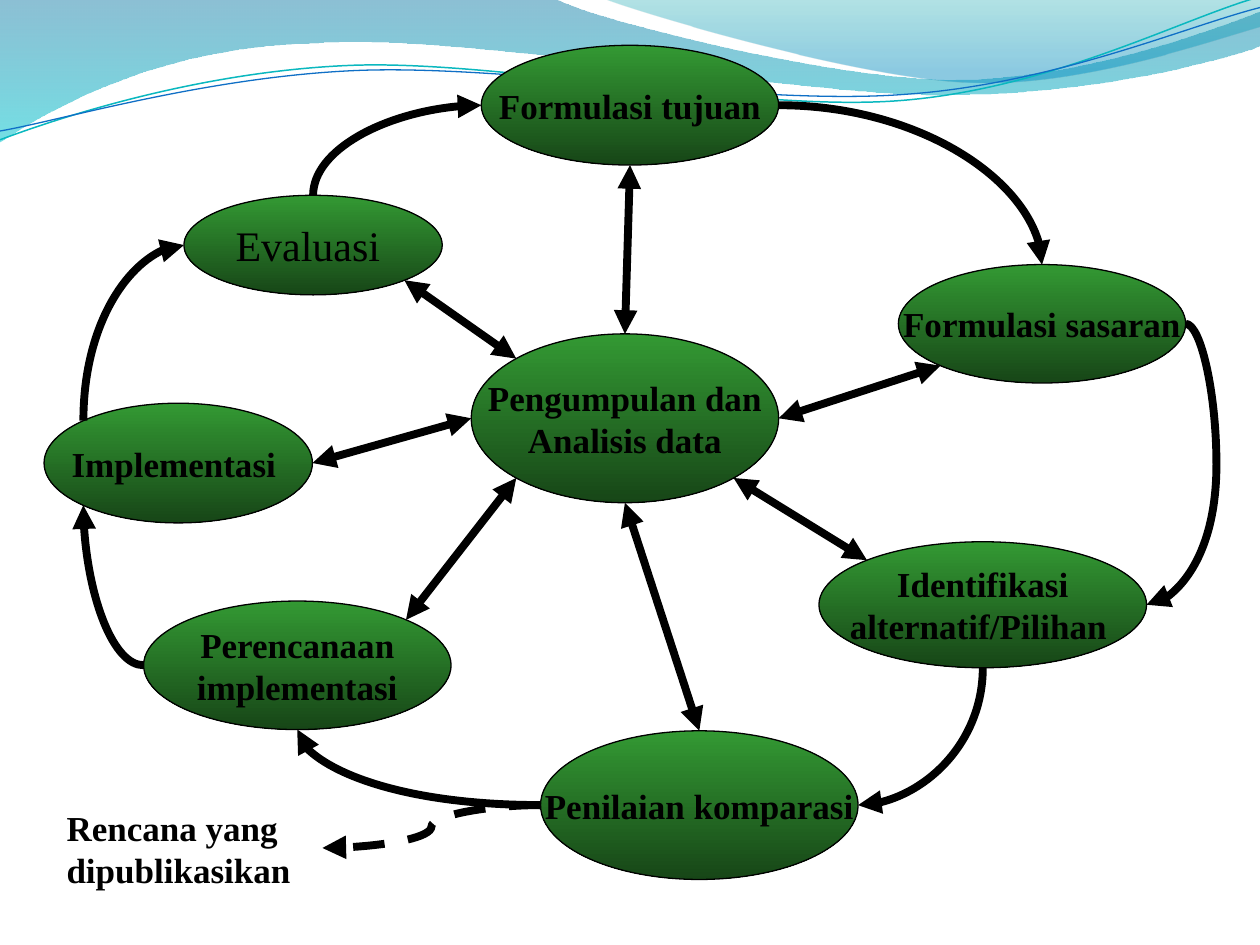
import math

from lxml import etree
from pptx import Presentation
from pptx import util as u
from pptx.dml.color import RGBColor
from pptx.enum import dml, shapes, text
from pptx.oxml.ns import qn

COLORS = {
    "ink": "000000", "leaf": "339933",
    "deep_blue": "0074A1", "aqua": "00C6CF", "teal": "00A1A9", "sky": "008BBF",
    "teal_line": "0AB8BF", "blue_line": "0F6FC6",
}
RGB = {name: RGBColor.from_string(value) for name, value in COLORS.items()}
FONT = "Times New Roman"

prs = Presentation()
prs.slide_width, prs.slide_height = u.Inches(10), u.Inches(7.5)
CELL = prs.slide_width // 1000  # the slide is a grid of 1000 columns by 750 rows
slide = prs.slides.add_slide(prs.slide_layouts[6])


def fill_gradient(shape, stops):
    """Vertical gradient; each stop is (position, colour, {modifier tag: percent})."""
    shape.fill.gradient()
    shape.fill.gradient_angle = 270
    for stop, (position, color, _) in zip(shape.fill.gradient_stops, stops):
        stop.position = position
        stop.color.rgb = RGB[color]
    tints = shape._element.spPr.find(qn("a:gradFill")).iter(qn("a:srgbClr"))
    for tint, (_, _, modifiers) in zip(tints, stops):
        for tag, percent in modifiers.items():
            modifier = etree.SubElement(tint, qn(tag))
            if percent:
                modifier.set("val", str(round(percent * 1000)))


def add_arrow(kind, start, end, both=False):
    """Thick black connector between two grid points with triangle heads."""
    arrow = slide.shapes.add_connector(kind, *(round(v * CELL) for v in start + end))
    arrow.line.width = u.Pt(4.5)
    arrow.line.color.rgb = RGB["ink"]
    ln = arrow.line._get_or_add_ln()
    for tag in ("a:headEnd", "a:tailEnd") if both else ("a:tailEnd",):
        etree.SubElement(ln, qn(tag)).set("type", "triangle")
    etree.SubElement(arrow._element.spPr, qn("a:effectLst"))
    return arrow


# Waves at the top: start point, then straight (2 numbers) or Bezier (6 numbers) steps
waves = [
    ([(0, 0), (440, -1), (476, 17, 664, 63, 758, 63), (853, 63, 958, 26, 1000, 9),
      (1001, 36), (983, 44, 870, 76, 746, 75), (622, 75, 382, 28, 257, 34),
      (129, 36, 46, 83, -1, 113), (0, 0)],
     [(0, "deep_blue", {"a:alpha": 45}), (1, "aqua", {"a:alpha": 55})], None),
    ([(479, -1), (509, 11, 682, 62, 769, 65), (856, 69, 961, 32, 1000, 21),
      (1000, 0), (479, -1)],
     [(0, "teal", {"a:alpha": 30}), (0.8, "sky", {"a:alpha": 45})], None),
    ([(0, 111), (48, 93, 158, 57, 277, 52), (395, 47, 593, 89, 713, 80),
      (833, 71, 938, 15, 998, -2)], None, ("teal_line", 0.85)),
    ([(0, 104), (47, 96, 164, 61, 283, 56), (403, 51, 597, 84, 717, 75),
      (836, 67, 941, 21, 1000, 6)], None, ("blue_line", 0.75)),
]
for (origin, *steps), stops, stroke in waves:
    outline = slide.shapes.build_freeform(*origin, scale=CELL)
    for step in steps:
        outline.add_line_segments(list(zip(step[::2], step[1::2])), close=False)
    wave = outline.convert_to_shape()
    # Join each three points of a Bezier step into one curve
    path_xml = next(wave._element.iter(qn("a:path")))
    segments = iter(path_xml.findall(qn("a:lnTo")))
    for step in steps:
        first, *others = [next(segments) for _ in step[::2]]
        if others:
            first.tag = qn("a:cubicBezTo")
        for other in others:
            first.append(other[0])
            path_xml.remove(other)
    wave.shadow.inherit = False
    if stops:
        etree.SubElement(path_xml, qn("a:close"))
        fill_gradient(wave, stops)
        wave.line.fill.background()
    else:
        wave.fill.background()
        wave.line.color.rgb = RGB[stroke[0]]
        wave.line.width = u.Pt(stroke[1])

# Stages of the cycle and the hub: left, top, width, height, lines
stages = {
    "tujuan": (382, 36, 236, 95, ["Formulasi tujuan"]),
    "sasaran": (713, 210, 228, 94, ["Formulasi sasaran"]),
    "alternatif": (650, 430, 260, 100, ["Identifikasi", "alternatif/Pilihan "]),
    "komparasi": (429, 580, 252, 118, ["Penilaian komparasi"]),
    "perencanaan": (114, 477, 244, 102, ["Perencanaan", "implementasi"]),
    "implementasi": (35, 320, 213, 95, ["Implementasi "]),
    "evaluasi": (146, 155, 205, 79, ["Evaluasi "]),
    "data": (374, 265, 244, 134, ["Pengumpulan dan", "Analisis data"]),
}
# Points on an ellipse as shares of its width and height
NEAR = (1 - math.sqrt(0.5)) / 2
FAR = 1 - NEAR
SIDES = {"top": (0.5, 0), "bottom": (0.5, 1), "left": (0, 0.5), "right": (1, 0.5),
         "top left": (NEAR, NEAR), "top right": (FAR, NEAR),
         "bottom left": (NEAR, FAR), "bottom right": (FAR, FAR)}
GREEN = [(0, "leaf", {}),
         (1, "leaf", {"a:gamma": None, "a:shade": 46.28, "a:invGamma": None})]
sites = {}
for stage, (left, top, width, height, lines) in stages.items():
    for side, (x, y) in SIDES.items():
        sites[stage, side] = (left + x * width, top + y * height)
    oval = slide.shapes.add_shape(shapes.MSO_SHAPE.OVAL,
                                  *(v * CELL for v in (left, top, width, height)))
    oval.shadow.inherit = False
    fill_gradient(oval, GREEN)
    oval.line.color.rgb = RGB["ink"]
    oval.line.width = u.Pt(0.75)
    frame = oval.text_frame
    frame.word_wrap = False
    frame.vertical_anchor = text.MSO_ANCHOR.MIDDLE
    frame.text = "\n".join(lines)
    for line in frame.paragraphs:
        line.alignment = text.PP_ALIGN.CENTER
        line.font.name = FONT
        line.font.size = u.Pt(24 if stage == "evaluasi" else 20)
        line.font.bold = stage != "evaluasi"
        line.font.color.rgb = RGB["ink"]

# Published plan
plan = slide.shapes.add_textbox(*(v * CELL for v in (43, 635, 213, 77))).text_frame
plan.word_wrap = True
plan.auto_size = text.MSO_AUTO_SIZE.SHAPE_TO_FIT_TEXT
plan.text = "Rencana yang dipublikasikan"
caption = plan.paragraphs[0]
caption.space_before = u.Pt(10)
caption.font.name, caption.font.size, caption.font.bold = FONT, u.Pt(20), True
caption.font.color.rgb = RGB["ink"]

# Quarter-turn arrows round the cycle
CURVE = shapes.MSO_CONNECTOR.CURVE
turns = [
    ("tujuan", "right", "sasaran", "top"),
    ("alternatif", "bottom", "komparasi", "right"),
    ("komparasi", "left", "perencanaan", "bottom"),
    ("perencanaan", "left", "implementasi", "bottom left"),
    ("implementasi", "top left", "evaluasi", "left"),
    ("evaluasi", "top", "tujuan", "left"),
]
for source, leaving, target, entering in turns:
    start, end = sites[source, leaving], sites[target, entering]
    rotation = 0
    if leaving not in ("left", "right"):  # leaves vertically: a box on its side, rotated
        (x1, y1), (x2, y2) = start, end
        mid_x, mid_y = (x1 + x2) / 2, (y1 + y2) / 2
        half_w, half_h = abs(y2 - y1) / 2, abs(x2 - x1) / 2
        rotation = 90 if y2 > y1 else 270
        start, end = (mid_x - half_w, mid_y - half_h), (mid_x + half_w, mid_y + half_h)
    turn = add_arrow(CURVE, start, end)
    turn._element.spPr.find(qn("a:prstGeom")).set("prst", "curvedConnector2")
    if rotation:
        turn._element.spPr.find(qn("a:xfrm")).set("rot", str(rotation * 60000))

# Dashed arrow to the published plan
add_arrow(CURVE, sites["komparasi", "left"], (256, 673)).line.dash_style = dml.MSO_LINE.DASH

# Arrow that bulges out to the right
bulge = add_arrow(CURVE, sites["sasaran", "right"], sites["alternatif", "right"])
guides = bulge._element.spPr.find(qn("a:prstGeom")).get_or_add_avLst()
guide = etree.SubElement(guides, qn("a:gd"))
guide.set("name", "adj1")
guide.set("fmla", "val -79100")

# Two-way spokes between the hub and each stage
spokes = [
    ("top", "tujuan", "bottom"), ("top left", "evaluasi", "bottom right"),
    ("right", "sasaran", "bottom left"), ("bottom right", "alternatif", "top left"),
    ("bottom", "komparasi", "top"), ("bottom left", "perencanaan", "top right"),
    ("left", "implementasi", "right"),
]
for leaving, stage, entering in spokes:
    add_arrow(shapes.MSO_CONNECTOR.STRAIGHT, sites["data", leaving], sites[stage, entering], True)

prs.save("out.pptx")
